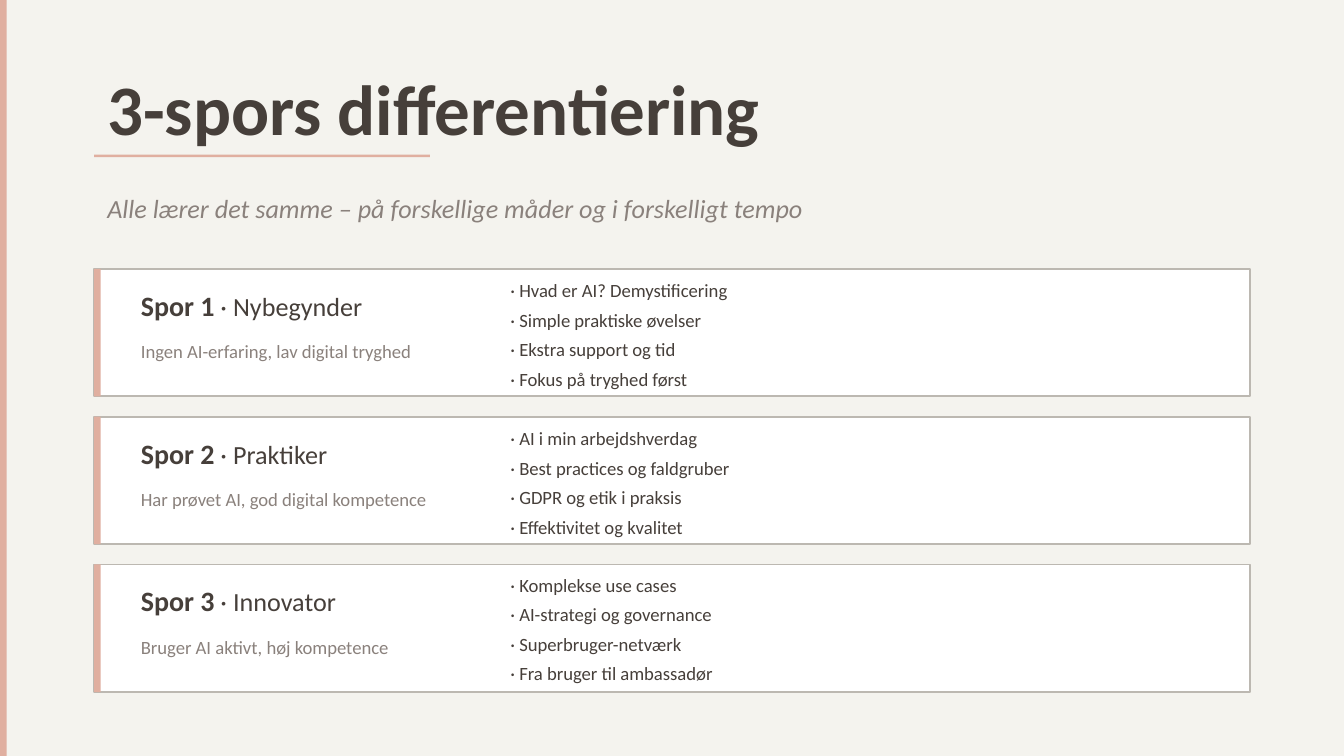
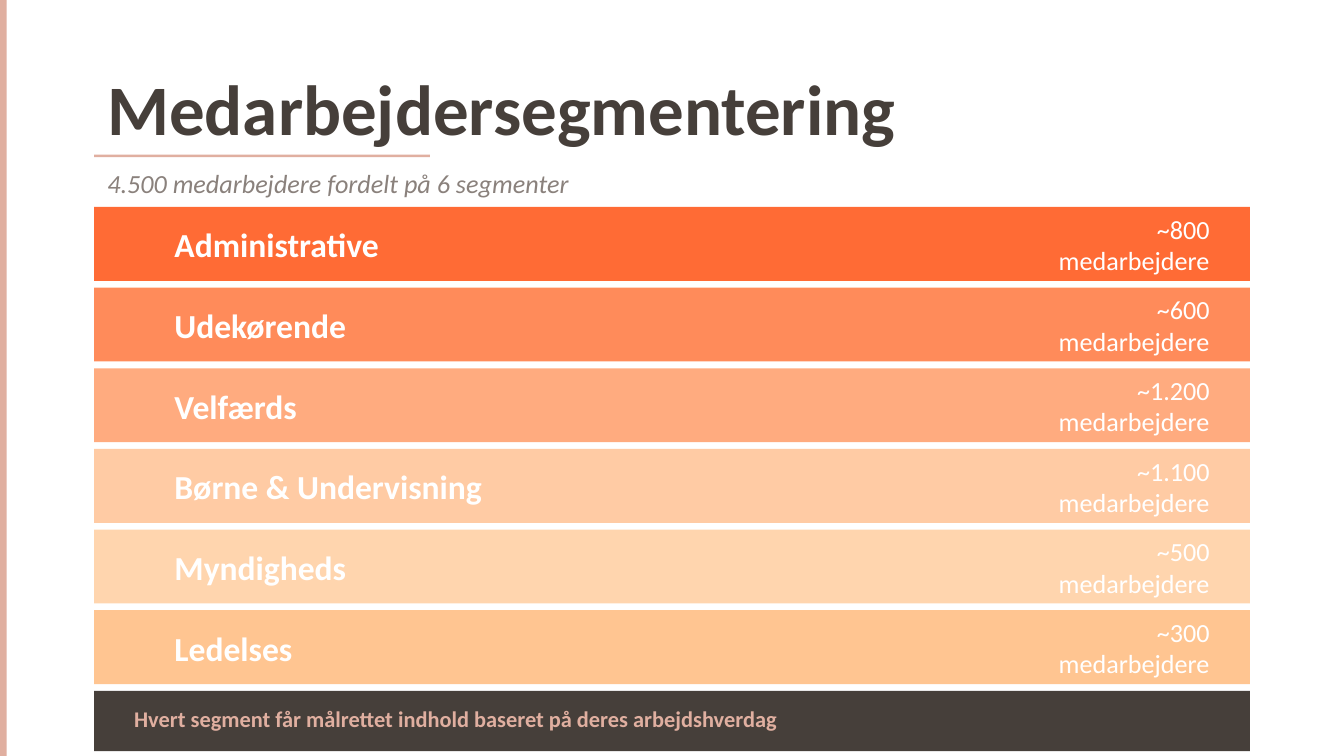
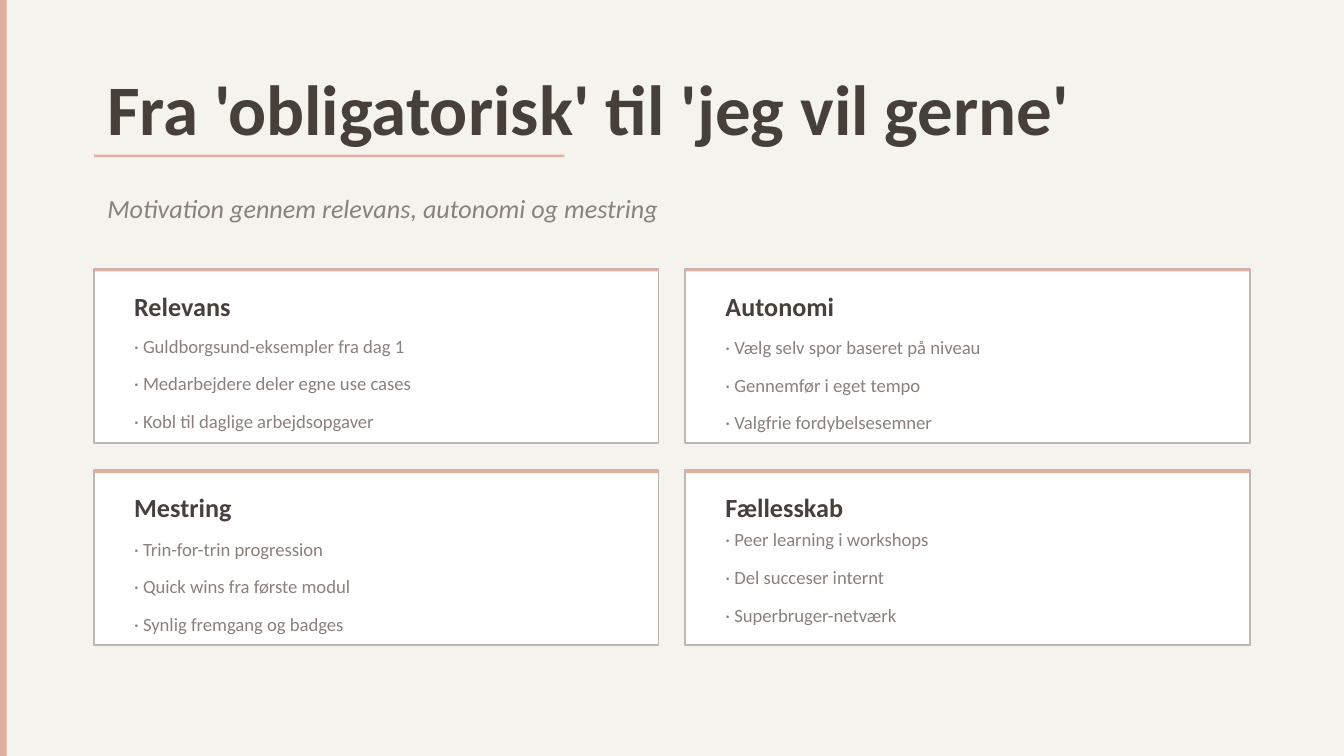
from pptx import Presentation
from pptx.dml.color import RGBColor
from pptx.enum.shapes import MSO_SHAPE
from pptx.enum.text import MSO_ANCHOR as ANCHOR, PP_ALIGN as ALIGN
from pptx.util import Inches, Pt

FONT = "Calibri"
DARK = RGBColor(0x46, 0x3F, 0x3A)
GREY = RGBColor(0x8A, 0x81, 0x7C)
BORDER = RGBColor(0xBC, 0xB8, 0xB1)
ROSE = RGBColor(0xE0, 0xAF, 0xA0)
CREAM = RGBColor(0xF4, 0xF3, 0xEE)
WHITE = RGBColor(0xFF, 0xFF, 0xFF)

SLIDE_W = 10
SLIDE_H = SLIDE_W * 9 / 16
LEFT, CONTENT_W = 0.7, 8.6
ACCENT = 0.05
RULE = 0.02

TRACKS = [
    ("Spor 1", "Nybegynder", "Ingen AI-erfaring, lav digital tryghed", 0.06,
     ["Hvad er AI? Demystificering", "Simple praktiske øvelser",
      "Ekstra support og tid", "Fokus på tryghed først"]),
    ("Spor 2", "Praktiker", "Har prøvet AI, god digital kompetence", 0.06,
     ["AI i min arbejdshverdag", "Best practices og faldgruber",
      "GDPR og etik i praksis", "Effektivitet og kvalitet"]),
    ("Spor 3", "Innovator", "Bruger AI aktivt, høj kompetence", 0.05,
     ["Komplekse use cases", "AI-strategi og governance",
      "Superbruger-netværk", "Fra bruger til ambassadør"]),
]

SEGMENTS = [
    ("Administrative", "800", RGBColor(0xFF, 0x6B, 0x35)),
    ("Udekørende", "600", RGBColor(0xFF, 0x8B, 0x5A)),
    ("Velfærds", "1.200", RGBColor(0xFF, 0xAB, 0x7F)),
    ("Børne & Undervisning", "1.100", RGBColor(0xFF, 0xCB, 0xA4)),
    ("Myndigheds", "500", RGBColor(0xFF, 0xD5, 0xAE)),
    ("Ledelses", "300", RGBColor(0xFF, 0xC5, 0x91)),
]

DRIVERS = [
    ("Relevans", 0.44, 0.25,
     ["Guldborgsund-eksempler fra dag 1", "Medarbejdere deler egne use cases",
      "Kobl til daglige arbejdsopgaver"]),
    ("Autonomi", 0.45, 0.25,
     ["Vælg selv spor baseret på niveau", "Gennemfør i eget tempo",
      "Valgfrie fordybelsesemner"]),
    ("Mestring", 0.45, 0.25,
     ["Trin-for-trin progression", "Quick wins fra første modul",
      "Synlig fremgang og badges"]),
    ("Fællesskab", 0.38, 0.49,
     ["Peer learning i workshops", "Del succeser internt",
      "Superbruger-netværk"]),
]


def add_rect(s, x, y, w, h, fill, line=None):
    """Draw a flat rectangle, outlined when a line colour is given."""
    sp = s.shapes.add_shape(MSO_SHAPE.RECTANGLE, Inches(x), Inches(y), Inches(w), Inches(h))
    sp.shadow.inherit = False
    sp.fill.solid()
    sp.fill.fore_color.rgb = fill
    if line is None:
        sp.line.fill.background()
    else:
        sp.line.color.rgb = line
        sp.line.width = Pt(1)


def add_text(s, x, y, w, h, runs, color, anchor=ANCHOR.MIDDLE, align=ALIGN.LEFT, italic=False):
    """Write one paragraph from (text, size, bold) runs."""
    tf = s.shapes.add_textbox(Inches(x), Inches(y), Inches(w), Inches(h)).text_frame
    tf.word_wrap = True
    tf.vertical_anchor = anchor
    p = tf.paragraphs[0]
    p.alignment = align
    for text, size, bold in runs:
        r = p.add_run()
        r.text = text
        r.font.name = FONT
        r.font.size = Pt(size)
        r.font.bold = bold
        r.font.italic = italic
        r.font.color.rgb = color


def add_points(s, x, y, w, h, step, points, color, anchor):
    """Stack short points at an even step."""
    for i, point in enumerate(points):
        add_text(s, x, y + i * step, w, h, [(f"· {point}", 10, False)], color, anchor)


def add_base(prs, title, subtitle, bg=CREAM, rule_w=2.5, subtitle_y=1.4):
    """Add a slide with the side band, title, rule and subtitle."""
    s = prs.slides.add_slide(prs.slide_layouts[6])
    s.background.fill.solid()
    s.background.fill.fore_color.rgb = bg
    add_rect(s, 0, 0, ACCENT, SLIDE_H, ROSE)
    add_text(s, LEFT, 0.5, 9, 0.6, [(title, 38, True)], DARK)
    add_rect(s, LEFT, 1.15, rule_w, RULE, ROSE)
    add_text(s, LEFT, subtitle_y, 8.5, 0.3, [(subtitle, 14, False)], GREY, italic=True)
    return s


def add_track(s, x, y, w, h, track, role, profile, points_dy, points):
    """Draw a track card with its audience and contents."""
    add_rect(s, x, y, w, h, WHITE, BORDER)
    add_rect(s, x, y, ACCENT, h, ROSE)
    add_text(s, x + 0.25, y + 0.12, 2.5, 0.3,
             [(track, 15, True), (f" · {role}", 14, False)], DARK)
    add_text(s, x + 0.25, y + 0.48, 2.5, 0.35, [(profile, 10, False)], GREY, ANCHOR.TOP)
    add_points(s, x + 3, y + points_dy, w - 3.2, 0.2, 0.22, points, DARK, ANCHOR.MIDDLE)


def add_segment(s, x, y, w, h, name, count, fill):
    """Draw a segment bar with its name and headcount."""
    add_rect(s, x, y, w, h, fill)
    add_text(s, x + 0.5, y + 0.08, 3, 0.4, [(name, 18, True)], WHITE)
    add_text(s, x + w - 1.8, y + 0.08, 1.6, 0.4,
             [(f"~{count} medarbejdere", 14, False)], WHITE, align=ALIGN.RIGHT)


def add_driver(s, x, y, w, h, heading, points_dy, point_h, points):
    """Draw a motivation card with a heading and points."""
    add_rect(s, x, y, w, h, WHITE, BORDER)
    add_rect(s, x, y, w, RULE, ROSE)
    add_text(s, x + 0.2, y + 0.15, w - 0.4, 0.25, [(heading, 14, True)], DARK)
    add_points(s, x + 0.2, y + points_dy, w - 0.4, point_h, 0.28, points, GREY, ANCHOR.TOP)


def tracks_slide(prs):
    """Build the slide with the three learning tracks."""
    s = add_base(prs, "3-spors differentiering",
                 "Alle lærer det samme – på forskellige måder og i forskelligt tempo")
    for i, track in enumerate(TRACKS):
        add_track(s, LEFT, 2 + i * 1.1, CONTENT_W, 0.95, *track)


def segments_slide(prs):
    """Build the slide with the employee segments."""
    s = add_base(prs, "Medarbejdersegmentering",
                 "4.500 medarbejdere fordelt på 6 segmenter", bg=WHITE, subtitle_y=1.21)
    top, step = 1.54, 0.6
    for i, segment in enumerate(SEGMENTS):
        add_segment(s, LEFT, top + i * step, CONTENT_W, 0.55, *segment)
    y = top + len(SEGMENTS) * step
    add_rect(s, LEFT, y, CONTENT_W, 0.45, DARK)
    add_text(s, LEFT + 0.2, y + 0.08, CONTENT_W - 0.4, 0.25,
             [("Hvert segment får målrettet indhold baseret på deres arbejdshverdag", 12, True)],
             ROSE)


def drivers_slide(prs):
    """Build the slide with the four motivation drivers."""
    s = add_base(prs, "Fra 'obligatorisk' til 'jeg vil gerne'",
                 "Motivation gennem relevans, autonomi og mestring", rule_w=3.5)
    w, h, gap = 4.2, 1.3, 0.2
    for i, driver in enumerate(DRIVERS):
        row, col = divmod(i, 2)
        add_driver(s, LEFT + col * (w + gap), 2 + row * (h + gap), w, h, *driver)


def main():
    """Build and save the presentation."""
    prs = Presentation()
    prs.slide_width, prs.slide_height = Inches(SLIDE_W), Inches(SLIDE_H)
    tracks_slide(prs)
    segments_slide(prs)
    drivers_slide(prs)
    prs.save("out.pptx")


if __name__ == "__main__":
    main()
